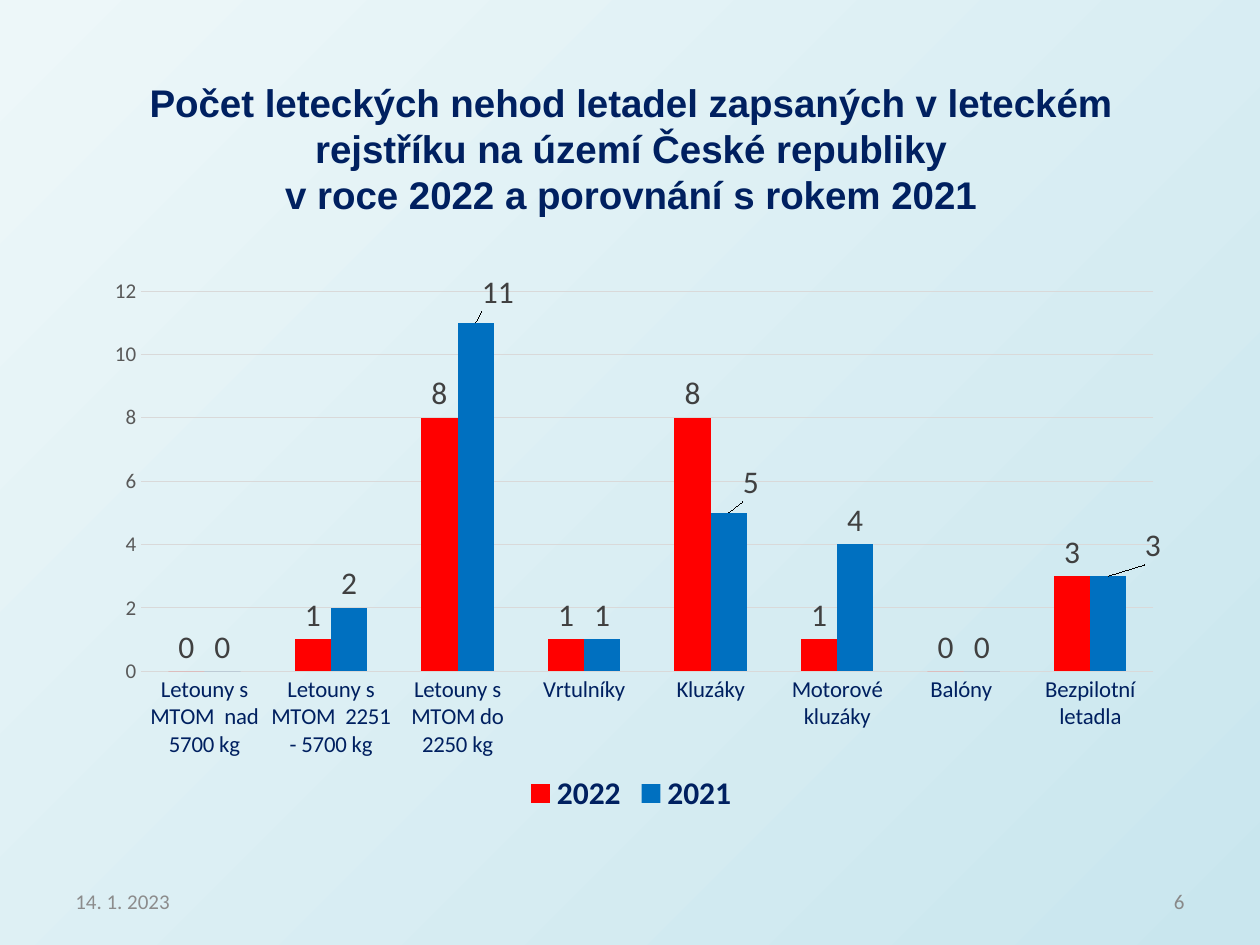
from dataclasses import dataclass

from lxml.etree import SubElement
from pptx import Presentation
from pptx.chart.chart import Chart
from pptx.chart.data import CategoryChartData
from pptx.dml.color import RGBColor
from pptx.enum.chart import XL_CHART_TYPE, XL_LABEL_POSITION, XL_LEGEND_POSITION, XL_TICK_MARK
from pptx.enum.text import MSO_ANCHOR, PP_ALIGN
from pptx.oxml.ns import qn
from pptx.slide import Slide
from pptx.text.text import Font
from pptx.util import Inches, Pt

NAVY = "002060"
GRID = "D9D9D9"
LABEL = "404040"


@dataclass
class Caption:
    text: str
    left: float
    top: float
    width: float
    height: float
    size: int
    color: str
    font: str = "Calibri"
    bold: bool = False
    align: PP_ALIGN = PP_ALIGN.LEFT


@dataclass
class YearSeries:
    name: str
    color: str
    values: list[int]
    label_shifts: dict[int, tuple[float, float]]


CAPTIONS = [
    Caption("14. 1. 2023", 0.5, 6.95, 2.33, 0.4, 12, "8C8C8C"),
    Caption("6", 7.17, 6.95, 2.33, 0.4, 12, "898989", align=PP_ALIGN.RIGHT),
    Caption(
        "Počet leteckých nehod letadel zapsaných v leteckém rejstříku "
        "na území České republiky\vv roce 2022 a porovnání s rokem 2021",
        0.51, 0.55, 9, 1.25, 22, NAVY, "Arial", True, PP_ALIGN.CENTER,
    ),
]
CATEGORIES = [
    "Letouny s MTOM  nad 5700 kg",
    "Letouny s MTOM  2251 - 5700 kg",
    "Letouny s MTOM do 2250 kg",
    "Vrtulníky",
    "Kluzáky",
    "Motorové kluzáky",
    "Balóny ",
    "Bezpilotní letadla",
]
YEARS = [
    YearSeries("2022", "FF0000", [0, 1, 8, 1, 8, 1, 0, 3], {}),
    YearSeries("2021", "0070C0", [0, 2, 11, 1, 5, 4, 0, 3],
               {2: (0.02, -0.01), 4: (0.02, -0.01), 7: (0.04, -0.01)}),
]


def rgb(value: str) -> RGBColor:
    return RGBColor.from_string(value)


def style_font(font: Font, size: int, color: str, name: str = "Calibri", bold: bool = False) -> None:
    font.size = Pt(size)
    font.name = name
    font.bold = bold
    font.color.rgb = rgb(color)


def add_caption(page: Slide, caption: Caption) -> None:
    box = page.shapes.add_textbox(Inches(caption.left), Inches(caption.top),
                                  Inches(caption.width), Inches(caption.height))
    frame = box.text_frame
    frame.word_wrap = True
    frame.vertical_anchor = MSO_ANCHOR.MIDDLE
    frame.text = caption.text
    for para in frame.paragraphs:
        para.alignment = caption.align
        for span in para.runs:
            style_font(span.font, caption.size, caption.color, caption.font, caption.bold)


def fill_layout(layout, settings: dict[str, object]) -> None:
    manual = SubElement(layout, qn("c:manualLayout"))
    for tag, value in settings.items():
        SubElement(manual, qn(f"c:{tag}")).set("val", str(value))


def place_plot(chart: Chart) -> None:
    area = chart._chartSpace.find(f".//{qn('c:plotArea')}")
    layout = area.find(qn("c:layout"))
    if layout is None:
        layout = SubElement(area, qn("c:layout"))
        area.insert(0, layout)
    fill_layout(layout, {"layoutTarget": "inner", "xMode": "edge", "yMode": "edge",
                         "x": 0.059, "y": 0.167, "w": 0.911, "h": 0.6})


def style_series(series, year: YearSeries) -> None:
    series.format.fill.solid()
    series.format.fill.fore_color.rgb = rgb(year.color)
    series.invert_if_negative = False
    labels = series.data_labels
    labels.show_value = True
    labels.position = XL_LABEL_POSITION.OUTSIDE_END
    style_font(labels.font, 18, LABEL)
    for index, (shift_x, shift_y) in year.label_shifts.items():
        label = series.points[index].data_label
        style_font(label.font, 18, LABEL)
        label.position = XL_LABEL_POSITION.OUTSIDE_END
        element = series._element.xpath(f"c:dLbls/c:dLbl[c:idx/@val='{index}']")[0]
        layout = SubElement(element, qn("c:layout"))
        element.insert(1, layout)
        fill_layout(layout, {"x": shift_x, "y": shift_y})


def add_accident_chart(page: Slide) -> None:
    data = CategoryChartData()
    data.categories = CATEGORIES
    for year in YEARS:
        data.add_series(year.name, year.values)
    chart = page.shapes.add_chart(XL_CHART_TYPE.COLUMN_CLUSTERED, Inches(0.6), Inches(1.47),
                                  Inches(8.82), Inches(5.03), data).chart
    style_font(chart.font, 10, "000000")
    chart.has_title = False
    chart.has_legend = True
    chart.legend.position = XL_LEGEND_POSITION.BOTTOM
    chart.legend.include_in_layout = True
    style_font(chart.legend.font, 18, NAVY, bold=True)
    place_plot(chart)

    plot = chart.plots[0]
    plot.gap_width = 150
    plot.overlap = 0
    plot.vary_by_categories = False
    for series, year in zip(plot.series, YEARS):
        style_series(series, year)

    for axis, size, color in ((chart.category_axis, 13, NAVY), (chart.value_axis, 12, "595959")):
        axis.major_tick_mark = XL_TICK_MARK.NONE
        axis.minor_tick_mark = XL_TICK_MARK.NONE
        style_font(axis.tick_labels.font, size, color)
    chart.value_axis.minimum_scale = 0
    chart.value_axis.maximum_scale = 12
    chart.value_axis.major_unit = 2
    chart.value_axis.format.line.fill.background()
    for line, width in ((chart.category_axis.format.line, 0.75),
                        (chart.value_axis.major_gridlines.format.line, 0.5)):
        line.color.rgb = rgb(GRID)
        line.width = Pt(width)


def paint_background(page: Slide) -> None:
    fill = page.background.fill
    fill.gradient()
    fill.gradient_angle = 315
    for stop, color in zip(fill.gradient_stops, ("EDF7F9", "C9E6EE")):
        stop.color.rgb = rgb(color)


def main() -> None:
    deck = Presentation()
    deck.slide_width = Inches(10)
    deck.slide_height = Inches(7.5)
    page = deck.slides.add_slide(deck.slide_layouts[6])
    paint_background(page)
    for caption in CAPTIONS:
        add_caption(page, caption)
    add_accident_chart(page)
    deck.save("out.pptx")


if __name__ == "__main__":
    main()
